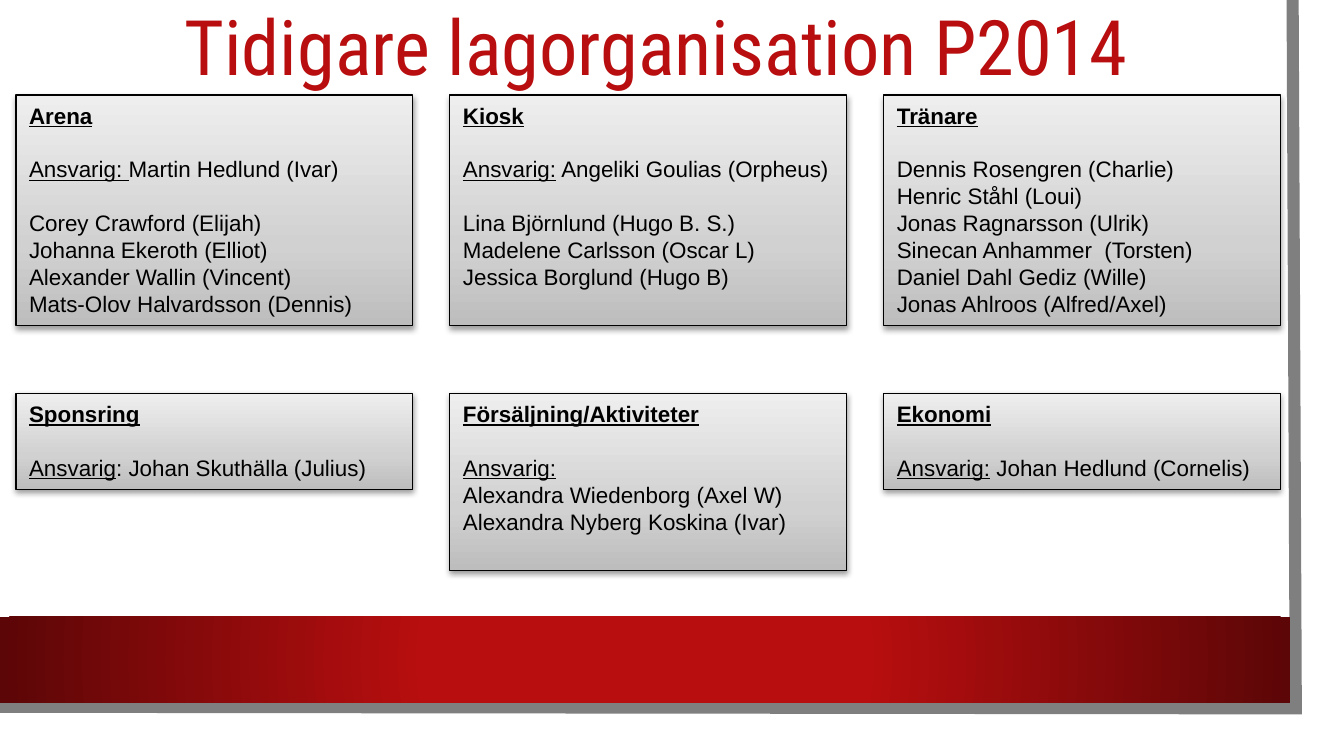
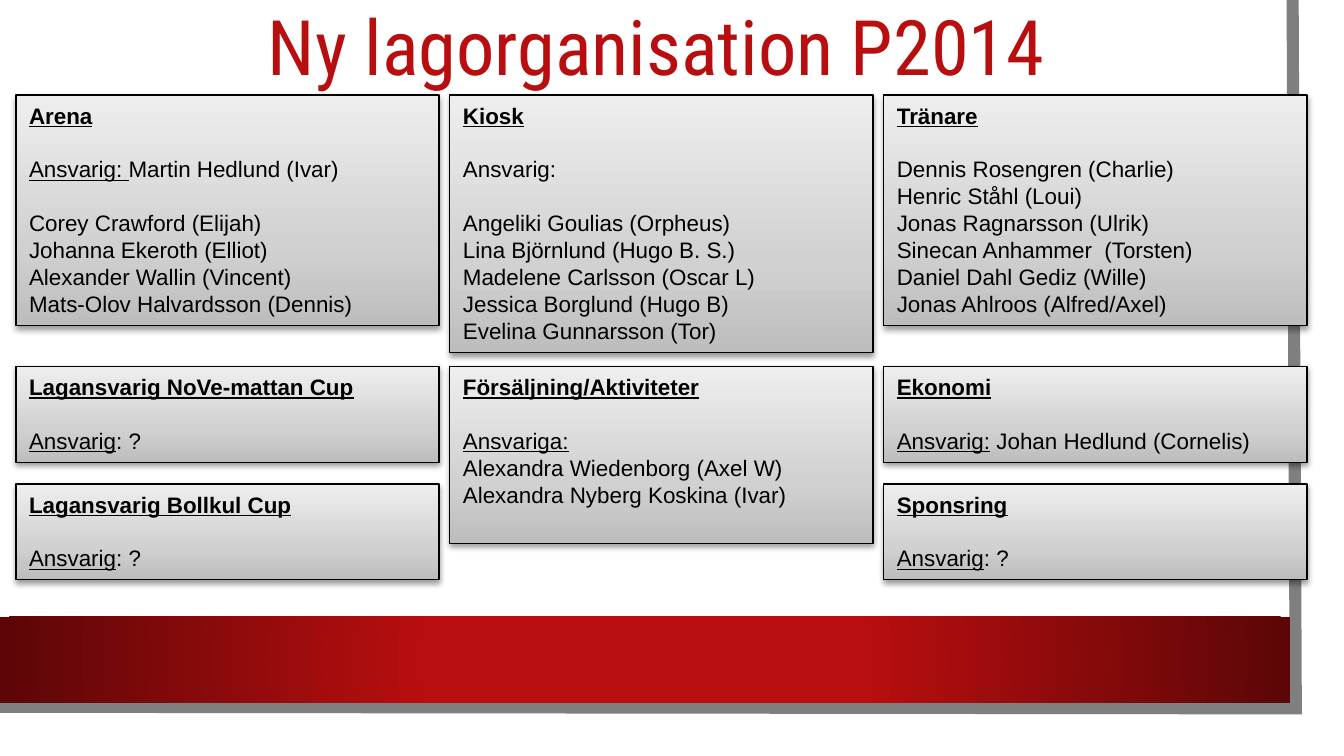
"""Builds two slides showing the former and the new team organisation."""
from lxml import etree
from pptx import Presentation
from pptx import util as u
from pptx.dml.color import RGBColor
from pptx.enum import shapes, text
from pptx.oxml import parse_xml
from pptx.oxml.ns import nsdecls, qn

COLORS = {
    "red": "B80E0F", "dark_red": "5C0607", "frame": "7F7F7F", "black": "000000",
    "low": "BDBDBD", "mid": "D1D1D1", "high": "EEEEEE",
}
TITLE_FONT, BODY_FONT = "Roboto Condensed", "Arial"
LEFT, COLUMN_STEP, TOP = 0.3, 8.2, 1.8
LINE_HEIGHT, BOX_PADDING = 0.51, 0.28

ARENA = (0, TOP, 8, "Arena", [
    ["Ansvarig: |Martin Hedlund (Ivar)"],
    ["Corey Crawford (Elijah)", "Johanna Ekeroth (Elliot)",
     "Alexander Wallin (Vincent)", "Mats-Olov Halvardsson (Dennis)"]])
TRAINERS = (2, TOP, 8, "Tränare", [
    ["Dennis Rosengren (Charlie)", "Henric Ståhl (Loui)", "Jonas Ragnarsson (Ulrik)",
     "Sinecan Anhammer  (Torsten)", "Daniel Dahl Gediz (Wille)",
     "Jonas Ahlroos (Alfred/Axel)"]])
KIOSK_STAFF = ["Lina Björnlund (Hugo B. S.)", "Madelene Carlsson (Oscar L)",
               "Jessica Borglund (Hugo B)"]
SELLERS = ["Alexandra Wiedenborg (Axel W)", "Alexandra Nyberg Koskina (Ivar)"]
ECONOMY = [["Ansvarig:| Johan Hedlund (Cornelis)"]]
VACANT = [["Ansvarig|: ?"]]

FORMER_ROW = 7.44
FORMER_BOXES = [
    ARENA,
    (1, TOP, 8, "Kiosk", [["Ansvarig:| Angeliki Goulias (Orpheus)"], KIOSK_STAFF]),
    TRAINERS,
    (0, FORMER_ROW, 3, "Sponsring", [["Ansvarig|: Johan Skuthälla (Julius)"]]),
    (1, FORMER_ROW, 6, "Försäljning/Aktiviteter", [["Ansvarig:|", *SELLERS]]),
    (2, FORMER_ROW, 3, "Ekonomi", ECONOMY),
]
NEW_ROW, NEW_LAST_ROW = 6.93, 9.15
NEW_BOXES = [
    ARENA,
    (1, TOP, 9, "Kiosk", [["Ansvarig:"], ["Angeliki Goulias (Orpheus)", *KIOSK_STAFF,
                                          "Evelina Gunnarsson (Tor)"]]),
    TRAINERS,
    (0, NEW_ROW, 3, "Lagansvarig NoVe-mattan Cup", VACANT),
    (1, NEW_ROW, 6, "Försäljning/Aktiviteter", [["Ansvariga:|", *SELLERS]]),
    (2, NEW_ROW, 3, "Ekonomi", ECONOMY),
    (0, NEW_LAST_ROW, 3, "Lagansvarig Bollkul Cup", VACANT),
    (2, NEW_LAST_ROW, 3, "Sponsring", VACANT),
]


def rgb(name):
    """Return the named colour."""
    return RGBColor.from_string(COLORS[name])


def set_gradient(sp, stops, direction):
    """Fill a shape with gradient stops given as (percent, colour name)."""
    sp.fill.background()
    gs = "".join(f'<a:gs pos="{pos * 1000}"><a:srgbClr val="{COLORS[name]}"/></a:gs>'
                 for pos, name in stops)
    grad = parse_xml(f'<a:gradFill {nsdecls("a")} rotWithShape="1">'
                     f'<a:gsLst>{gs}</a:gsLst>{direction}</a:gradFill>')
    pr = sp.element.spPr
    pr.replace(pr.find(qn("a:noFill")), grad)


def set_shadow(sp):
    """Give a shape a soft shadow straight below it."""
    sp.shadow.inherit = False
    sp.element.spPr.find(qn("a:effectLst")).append(parse_xml(
        f'<a:outerShdw {nsdecls("a")} blurRad="40000" dist="20000" dir="5400000" '
        f'rotWithShape="0"><a:srgbClr val="{COLORS["black"]}">'
        '<a:alpha val="38000"/></a:srgbClr></a:outerShdw>'))


def add_frame(s):
    """Draw the grey edge along the right and bottom sides."""
    builder = s.shapes.build_freeform(u.Cm(24.43), 0)
    builder.add_line_segments([(u.Cm(24.49), u.Cm(13.39)), (u.Cm(-0.05), u.Cm(13.36))],
                              close=False)
    sp = builder.convert_to_shape()
    sp.shadow.inherit = False
    sp.fill.background()
    sp.line.color.rgb = rgb("frame")
    sp.line.width = u.Pt(6.5)
    miter = etree.SubElement(sp.element.spPr.find(qn("a:ln")), qn("a:miter"))
    miter.set("lim", "800000")
    return sp


def add_band(s):
    """Draw the red band at the foot."""
    sp = s.shapes.add_shape(shapes.MSO_SHAPE.RECTANGLE, 0, u.Cm(11.66), u.Cm(24.38), u.Cm(1.63))
    sp.shadow.inherit = False
    sp.line.fill.background()
    set_gradient(sp, [(0, "red"), (34, "red"), (100, "dark_red")],
                 '<a:path path="circle"><a:fillToRect l="50000" t="50000" '
                 'r="50000" b="50000"/></a:path>')
    return sp


def decorate_layout(layout, s):
    """Draw the frame and band with a slide's tools and keep them on the layout."""
    for sp in (add_frame(s), add_band(s)):
        layout.placeholders[0].element.addprevious(sp.element)


def set_title(s, title):
    """Place and format the slide title."""
    sp = s.shapes.title
    sp.left, sp.top, sp.width, sp.height = u.Cm(0.3), u.Cm(0.15), u.Cm(24.23), u.Cm(1.6)
    tf = sp.text_frame
    tf.text = title
    tf.word_wrap = True
    tf.auto_size = text.MSO_AUTO_SIZE.NONE
    tf.vertical_anchor = text.MSO_ANCHOR.MIDDLE
    tf.margin_left = tf.margin_right = tf.margin_top = tf.margin_bottom = u.Cm(0.18)
    p = tf.paragraphs[0]
    p.alignment = text.PP_ALIGN.CENTER
    p.line_spacing = 0.9
    set_font(p, TITLE_FONT, 41, "red")


def set_font(p, name, size, color):
    """Set the font of a whole paragraph."""
    p.font.name = name
    p.font.size = u.Pt(size)
    p.font.color.rgb = rgb(color)


def write_line(p, line):
    """Write a left-aligned line; the part before a bar is underlined."""
    p.alignment = text.PP_ALIGN.LEFT
    set_font(p, BODY_FONT, 12, "black")
    lead, _, rest = line.rpartition("|")
    for part, underlined in ((lead, True), (rest, False)):
        if part:
            r = p.add_run()
            r.text = part
            if underlined:
                r.font.underline = True


def add_box(s, width, column, top, rows, heading, groups):
    """Add a role box with a heading and groups of lines."""
    sp = s.shapes.add_shape(
        shapes.MSO_SHAPE.RECTANGLE, u.Cm(LEFT + column * COLUMN_STEP), u.Cm(top),
        u.Cm(width), u.Cm(BOX_PADDING + rows * LINE_HEIGHT))
    set_gradient(sp, [(0, "low"), (35, "mid"), (100, "high")],
                 '<a:lin ang="16200000" scaled="0"/>')
    sp.line.color.rgb = rgb("black")
    sp.line.width = u.Pt(0.75)
    set_shadow(sp)
    tf = sp.text_frame
    tf.word_wrap = True
    tf.vertical_anchor = text.MSO_ANCHOR.TOP
    p = tf.paragraphs[0]
    write_line(p, heading + "|")
    p.font.bold = True
    for group in groups:
        for i, line in enumerate(group):
            p = tf.add_paragraph()
            if i == 0:
                p.space_before = u.Pt(14.4)
            write_line(p, line)


def main():
    """Build and save the presentation."""
    prs = Presentation()
    prs.slide_width, prs.slide_height = u.Cm(25.4), u.Cm(14.29)
    layout = prs.slide_layouts[5]
    organisations = [
        ("Tidigare lagorganisation P2014", 7.5, FORMER_BOXES),
        ("Ny lagorganisation P2014", 8, NEW_BOXES),
    ]
    for i, (title, width, boxes) in enumerate(organisations):
        s = prs.slides.add_slide(layout)
        if i == 0:
            decorate_layout(layout, s)
        set_title(s, title)
        for box in boxes:
            add_box(s, width, *box)
    prs.save("out.pptx")


if __name__ == "__main__":
    main()
